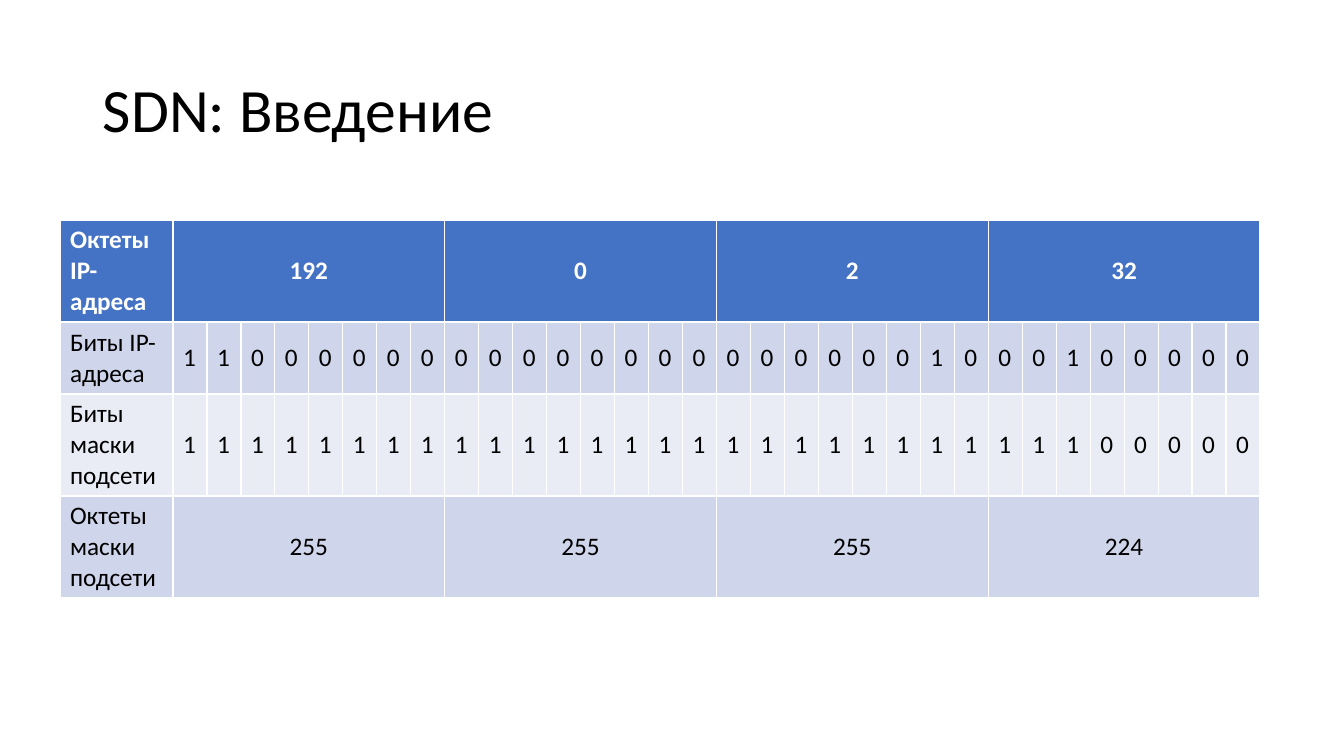
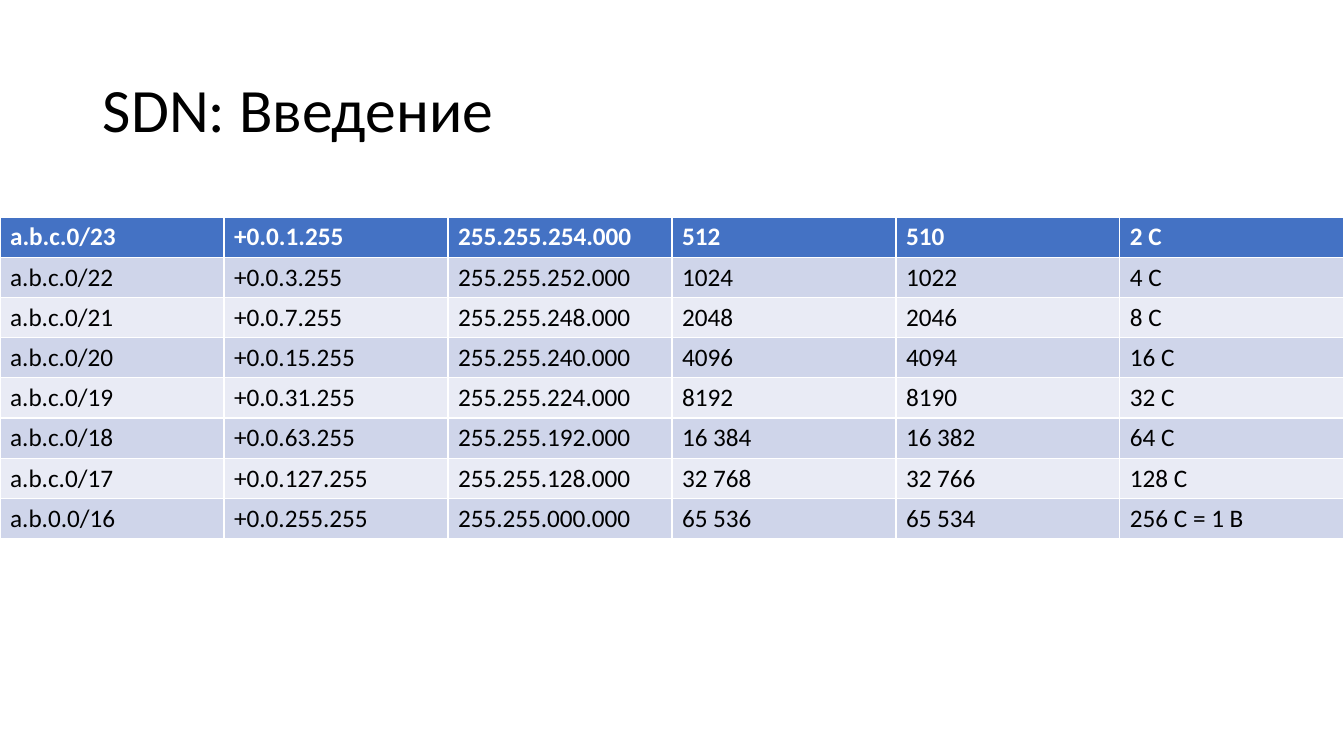
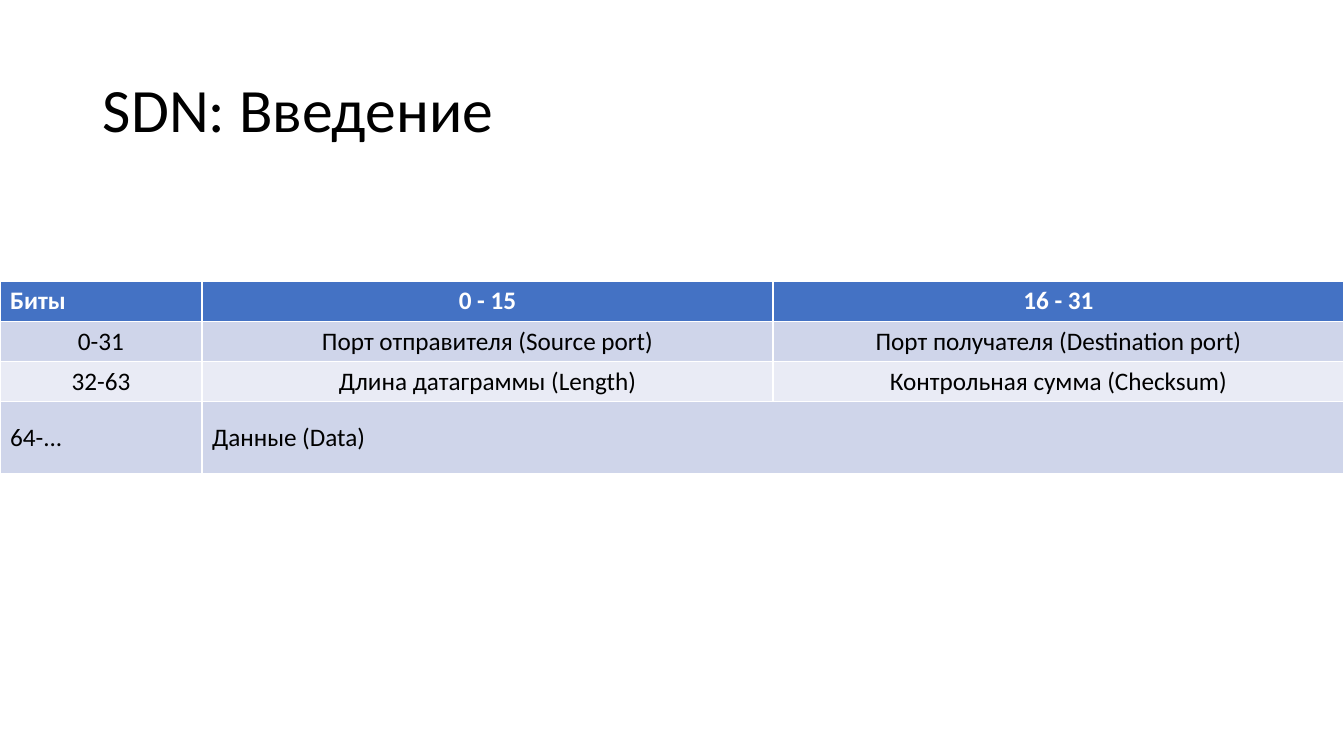
from dataclasses import dataclass

from pptx import Presentation
from pptx.dml.color import RGBColor
from pptx.enum.text import MSO_ANCHOR, PP_ALIGN
from pptx.util import Pt

PX = 914400 / 100.8
SLIDE_WIDTH, SLIDE_HEIGHT = 1344, 756
BLANK_LAYOUT = 6

LEFT, CENTER = PP_ALIGN.LEFT, PP_ALIGN.CENTER
MIDDLE = MSO_ANCHOR.MIDDLE

FONT = "Calibri"
BLACK = RGBColor(0x00, 0x00, 0x00)
WHITE = RGBColor(0xFF, 0xFF, 0xFF)
HEADER_FILL = RGBColor(0x44, 0x72, 0xC4)
BAND_FILLS = (RGBColor(0xCF, 0xD5, 0xEA), RGBColor(0xE9, 0xEB, 0xF5))

TITLE = "SDN: Введение"
TITLE_BOX = (93, 40, 1159, 146)
ROW_HEIGHT = 40

ADDRESS = (192, 0, 2, 32)
MASK = (255, 255, 255, 224)
BITS_PER_OCTET = 8

SUBNETS = (
    ("a.b.c.0/23", "+0.0.1.255", "255.255.254.000", "512", "510", "2 C"),
    ("a.b.c.0/22", "+0.0.3.255", "255.255.252.000", "1024", "1022", "4 C"),
    ("a.b.c.0/21", "+0.0.7.255", "255.255.248.000", "2048", "2046", "8 C"),
    ("a.b.c.0/20", "+0.0.15.255", "255.255.240.000", "4096", "4094", "16 C"),
    ("a.b.c.0/19", "+0.0.31.255", "255.255.224.000", "8192", "8190", "32 C"),
    ("a.b.c.0/18", "+0.0.63.255", "255.255.192.000", "16 384", "16 382", "64 C"),
    ("a.b.c.0/17", "+0.0.127.255", "255.255.128.000", "32 768", "32 766", "128 C"),
    ("a.b.0.0/16", "+0.0.255.255", "255.255.000.000", "65 536", "65 534", "256 C = 1 B"),
)


@dataclass
class Entry:
    """Text of one table cell, with the number of columns it covers."""
    text: str
    span: int = 1
    align: PP_ALIGN = LEFT
    vertical_inset: int = 5


def px(length):
    return round(length * PX)


def write_text(text_frame, text, size=18, color=BLACK, bold=False, align=LEFT,
               line_spacing=1.0):
    paragraph = text_frame.paragraphs[0]
    paragraph.alignment = align
    paragraph.line_spacing = line_spacing
    run = paragraph.add_run()
    run.text = text
    run.font.name = FONT
    run.font.size = Pt(size)
    run.font.bold = bold
    run.font.color.rgb = color


def add_titled_slide(presentation):
    slide = presentation.slides.add_slide(presentation.slide_layouts[BLANK_LAYOUT])
    text_frame = slide.shapes.add_textbox(*map(px, TITLE_BOX)).text_frame
    text_frame.word_wrap = True
    text_frame.vertical_anchor = MIDDLE
    write_text(text_frame, TITLE, size=44, line_spacing=0.9)
    return slide


def add_banded_table(slide, left, top, column_widths, row_heights, rows):
    """Place a table with a blue header row and two alternating body fills."""
    box = (left, top, sum(column_widths), sum(row_heights))
    table = slide.shapes.add_table(
        len(rows), len(column_widths), *map(px, box)).table
    for column, width in zip(table.columns, column_widths):
        column.width = px(width)
    for row, height in zip(table.rows, row_heights):
        row.height = px(height)

    for row_index, entries in enumerate(rows):
        is_header = row_index == 0
        fill = HEADER_FILL if is_header else BAND_FILLS[(row_index - 1) % 2]
        column_index = 0
        for entry in entries:
            cell = table.cell(row_index, column_index)
            column_index += entry.span
            if entry.span > 1:
                cell.merge(table.cell(row_index, column_index - 1))
            cell.fill.solid()
            cell.fill.fore_color.rgb = fill
            cell.vertical_anchor = MIDDLE
            cell.margin_top = cell.margin_bottom = px(entry.vertical_inset)
            write_text(cell.text_frame, entry.text, bold=is_header,
                       color=WHITE if is_header else BLACK, align=entry.align)


def octet_row(label, octets):
    return [Entry(label)] + [
        Entry(str(octet), span=BITS_PER_OCTET, align=CENTER) for octet in octets]


def bit_row(label, octets):
    return [Entry(label)] + [
        Entry(bit) for octet in octets for bit in f"{octet:08b}"]


def add_address_slide(presentation):
    add_banded_table(
        add_titled_slide(presentation), 60, 220,
        column_widths=[113] + [34] * BITS_PER_OCTET * len(ADDRESS),
        row_heights=[102, 72, 102, 102],
        rows=[
            octet_row("Октеты IP-адреса", ADDRESS),
            bit_row("Биты IP-адреса", ADDRESS),
            bit_row("Биты маски подсети", MASK),
            octet_row("Октеты маски подсети", MASK),
        ])


def add_subnet_slide(presentation):
    column_count = len(SUBNETS[0])
    add_banded_table(
        add_titled_slide(presentation), 0, 217,
        column_widths=[SLIDE_WIDTH // column_count] * column_count,
        row_heights=[ROW_HEIGHT] * len(SUBNETS),
        rows=[[Entry(text) for text in subnet] for subnet in SUBNETS])


def add_datagram_slide(presentation):
    label_width = 202
    field_width = (SLIDE_WIDTH - label_width) // 2
    fields = (
        ("0-31", "Порт отправителя (Source port)", "Порт получателя (Destination port)"),
        ("32-63", "Длина датаграммы (Length)", "Контрольная сумма (Checksum)"),
    )
    header = [Entry("Биты"), Entry("0 - 15", align=CENTER), Entry("16 - 31", align=CENTER)]
    body = [[Entry(text, align=CENTER) for text in field] for field in fields]
    data = [Entry("64-..."), Entry("Данные (Data)", span=2, vertical_inset=21)]
    add_banded_table(
        add_titled_slide(presentation), 0, 281,
        column_widths=[label_width, field_width, field_width],
        row_heights=[ROW_HEIGHT] * 3 + [72],
        rows=[header, *body, data])


def main():
    presentation = Presentation()
    presentation.slide_width = px(SLIDE_WIDTH)
    presentation.slide_height = px(SLIDE_HEIGHT)
    add_address_slide(presentation)
    add_subnet_slide(presentation)
    add_datagram_slide(presentation)
    presentation.save("out.pptx")


if __name__ == "__main__":
    main()
